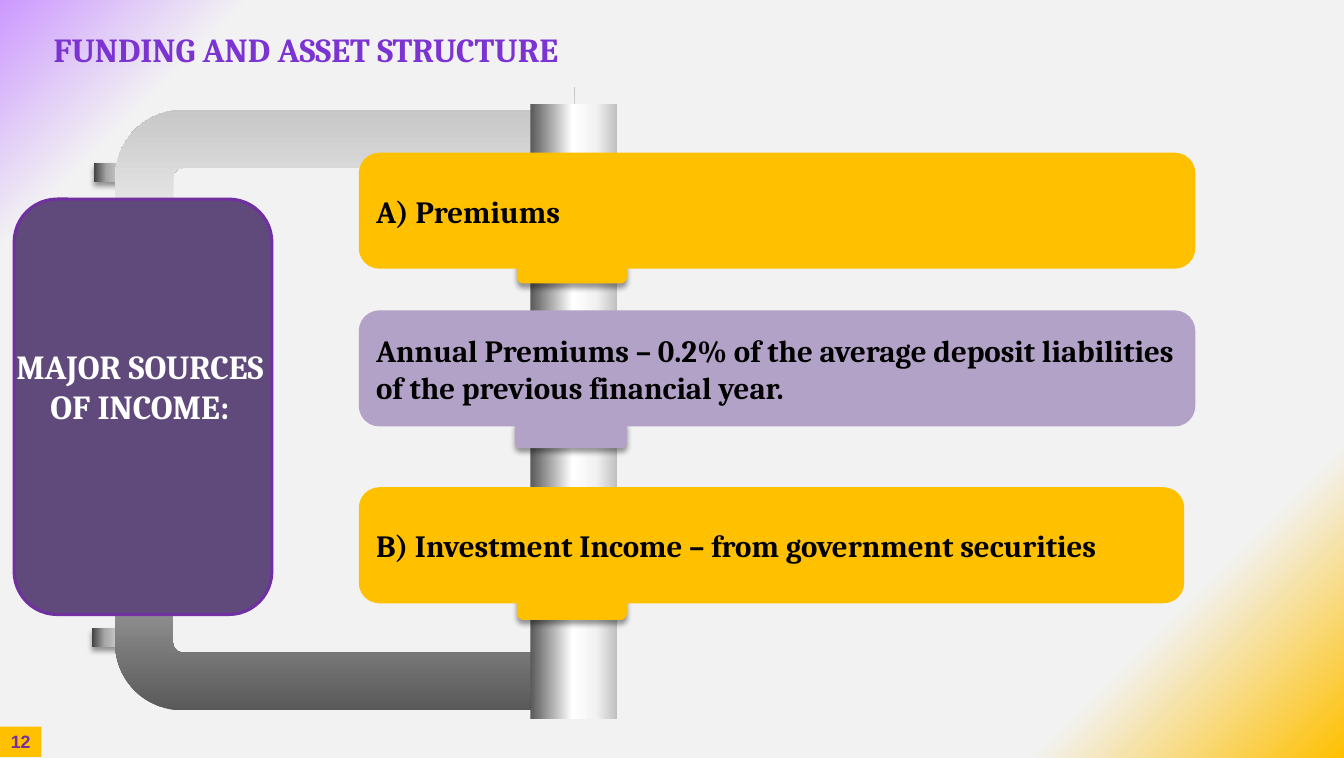
from pptx import Presentation
from pptx.dml.color import RGBColor
from pptx.enum.shapes import MSO_SHAPE as SHAPE
from pptx.enum.text import MSO_ANCHOR as ANCHOR, PP_ALIGN as ALIGN
from pptx.oxml.ns import qn
from pptx.util import Inches, Pt
from lxml.etree import SubElement

TITLE = "FUNDING AND ASSET STRUCTURE"
HEADING = "MAJOR SOURCES OF INCOME:"
PAGE_NUMBER = "12"
GOLD, LILAC, PURPLE = "FFC000", "B3A2C7", "7030A0"
BARS = [
    ("A) Premiums", GOLD, (3.57, 1.53, 8.24, 1.11), (5.13, 2.5, 1.06, 0.29)),
    ("B) Investment Income – from government securities", GOLD,
     (3.57, 4.84, 8.13, 1.11), (5.13, 5.83, 1.06, 0.29)),
    ("Annual Premiums – 0.2% of the average deposit liabilities "
     "of the previous financial year.", LILAC,
     (3.57, 3.09, 8.24, 1.11), (5.11, 4.17, 1.08, 0.25)),
]
BOLTS = [(0.91, 6.21, 0.6, 0.19), (0.93, 1.61, 0.6, 0.19)]
BACKDROP = [(0, "CC99FF"), (12, "F2F2F2"), (85, "F2F2F2"), (100, GOLD)]
BOLT_METAL = [(0, "404040"), (21, "A6A6A6"), (65, "F2F2F2"), (100, "808080")]
PIPE_METAL = [(0, "595959"), (48, "FFFFFF"), (75, "F2F2F2"), (100, "BFBFBF")]
BEND = [0.12, 0.108, 0, 0.14, 0.953]


def color(value):
    return RGBColor.from_string(value)


def set_gradient(fill, element, stops, angle=0):
    fill.gradient()
    fill.gradient_angle = -angle % 360
    stop_list = next(element.iter(qn("a:gsLst")))
    for old in list(stop_list):
        stop_list.remove(old)
    for position, value in stops:
        stop = SubElement(stop_list, qn("a:gs"), pos=str(position * 1000))
        SubElement(stop, qn("a:srgbClr"), val=value)


def add_shape(kind, box, fill, line=None, width=0, shadow=False):
    sp = slide.shapes.add_shape(kind, *map(Inches, box))
    sp.shadow.inherit = False
    if isinstance(fill, str):
        sp.fill.solid()
        sp.fill.fore_color.rgb = color(fill)
    else:
        set_gradient(sp.fill, sp._element, fill)
    if line:
        sp.line.color.rgb = color(line)
        sp.line.width = Pt(width)
    else:
        sp.line.fill.background()
    if shadow:
        effects = sp._element.spPr.find(qn("a:effectLst"))
        outer = SubElement(effects, qn("a:outerShdw"), blurRad=str(Pt(4)),
                           dist=str(Pt(3)), dir="5400000", rotWithShape="0")
        tint = SubElement(outer, qn("a:srgbClr"), val="000000")
        SubElement(tint, qn("a:alpha"), val="40000")
    return sp


def set_text(sp, text, size, value, font="Cambria", align=ALIGN.LEFT,
             anchor=ANCHOR.MIDDLE, inset=(0.1, 0.05)):
    tf = sp.text_frame
    tf.word_wrap = True
    tf.vertical_anchor = anchor
    tf.margin_left = tf.margin_right = Inches(inset[0])
    tf.margin_top = tf.margin_bottom = Inches(inset[1])
    p = tf.paragraphs[0]
    p.text = text
    p.alignment = align
    p.font.name, p.font.size, p.font.bold = font, Pt(size), True
    p.font.color.rgb = color(value)


def add_text(box, *args, **kwargs):
    set_text(slide.shapes.add_textbox(*map(Inches, box)), *args, **kwargs)


prs = Presentation()
prs.slide_width, prs.slide_height = Inches(13.3), Inches(7.5)
slide = prs.slides.add_slide(prs.slide_layouts[6])
set_gradient(slide.background.fill, slide._element, BACKDROP, 45)

for box in BOLTS:
    add_shape(SHAPE.RECTANGLE, box, BOLT_METAL, shadow=True)
bend = add_shape(SHAPE.U_TURN_ARROW, (0.44, 1.56, 6.17, 4.77), PIPE_METAL)
bend.rotation = 270
for i, value in enumerate(BEND):
    bend.adjustments[i] = value
add_shape(SHAPE.ROUNDED_RECTANGLE, (0.14, 1.97, 2.55, 4.11), "604A7B", PURPLE, 2.25)
add_shape(SHAPE.RECTANGLE, (5.25, 1.03, 0.86, 6.08), PIPE_METAL)
add_text((0, 2.38, 2.77, 2.88), HEADING, 24, "FFFFFF", align=ALIGN.CENTER,
         inset=(0.12, 0.06))
add_text((0.41, 0.23, 6.9, 0.53), TITLE, 24, "7B34D2", anchor=ANCHOR.TOP,
         inset=(0.12, 0.06))

badge = add_shape(SHAPE.RECTANGLE, (0, 7.19, 0.41, 0.3), GOLD)
set_text(badge, PAGE_NUMBER, 12.7, PURPLE, "Arial", ALIGN.CENTER, inset=(0.07, 0.04))

for text, fill, bar_box, tab_box in BARS:
    add_shape(SHAPE.ROUNDED_RECTANGLE, tab_box, fill, fill, 2, shadow=True)
    bar = add_shape(SHAPE.ROUNDED_RECTANGLE, bar_box, fill, fill, 2.75)
    set_text(bar, text, 22, "000000")

prs.save("out.pptx")
